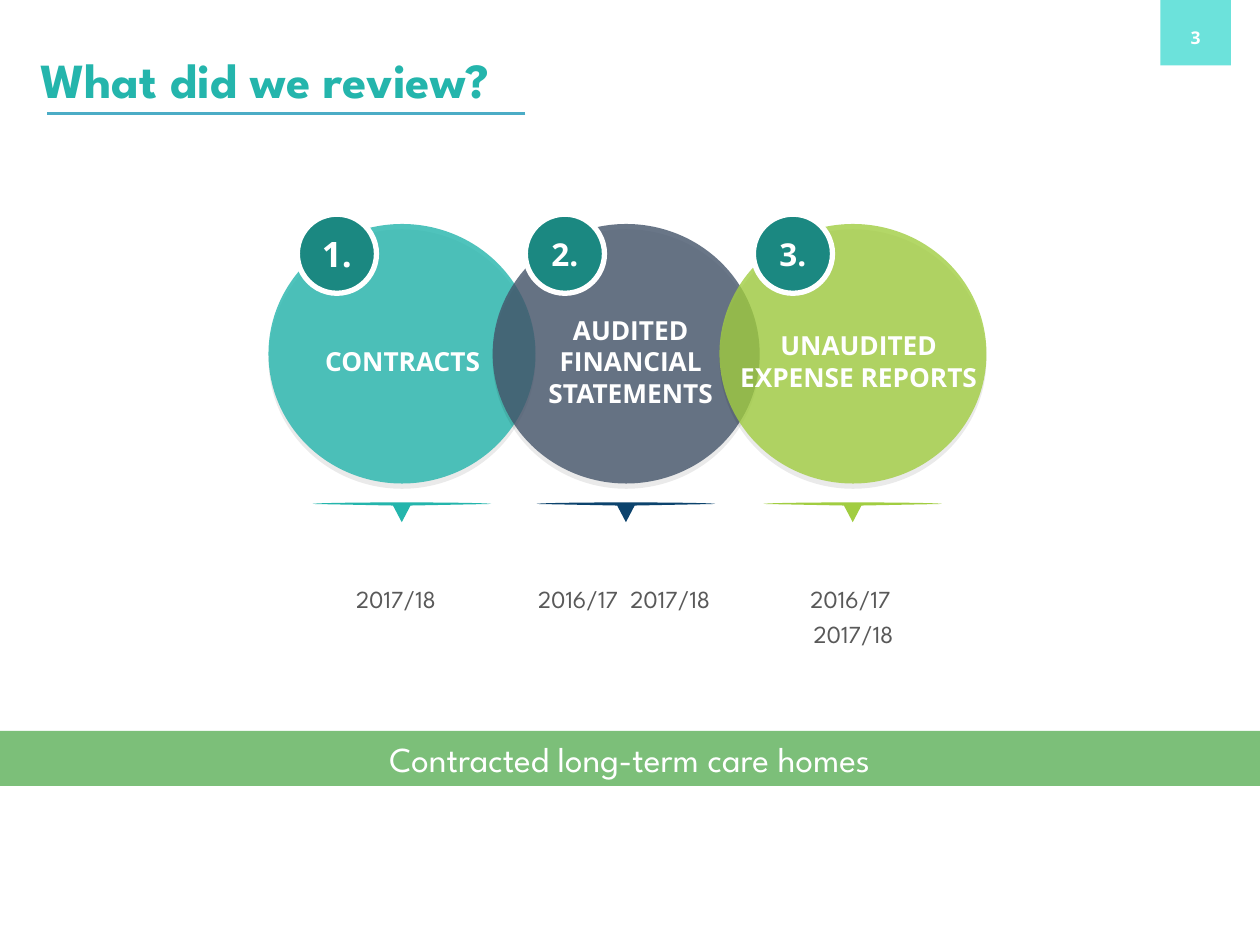
"""Build the slide that lists the three kinds of documents reviewed."""
from dataclasses import dataclass
from math import cos, pi, sin

from lxml import etree
from pptx import Presentation
from pptx.dml.color import RGBColor
from pptx.enum import shapes, text
from pptx.oxml import ns
from pptx.util import Pt

HEAD = "League Spartan"
BODY = "Open Sans"
WHITE = "FFFFFF"
TEAL = "24B5AC"
BADGE_STEP = 130.3


@dataclass
class Box:
    x: float
    y: float
    w: float
    h: float

    def emu(self) -> list:
        return [Pt(v) for v in (self.x, self.y, self.w, self.h)]


@dataclass
class Style:
    font: str
    size: float
    color: str
    bold: bool = False
    align: text.PP_ALIGN = text.PP_ALIGN.CENTER


@dataclass
class Source:
    label: str
    years: list
    circle_x: float
    caption: Box
    color: str
    pointer: str
    number_size: float


SOURCES = [
    Source("CONTRACTS", ["2017/18"], 153.4,
           Box(158.4, 326.9, 136, 26), TEAL, TEAL, 20),
    Source("AUDITED FINANCIAL STATEMENTS", ["2016/17  2017/18"], 281.5,
           Box(294.5, 326.9, 124.6, 46), "44546A", "0C436D", 18),
    Source("UNAUDITED EXPENSE REPORTS", ["2016/17 ", "2017/18"], 411.1,
           Box(425.5, 326.9, 124.6, 46), "A1CD41", "A1CD41", 18),
]


def rgb(color: str) -> RGBColor:
    return RGBColor.from_string(color)


def write(sp, lines: list, style: Style, anchor=text.MSO_ANCHOR.MIDDLE):
    tf = sp.text_frame
    tf.word_wrap = True
    tf.auto_size = text.MSO_AUTO_SIZE.NONE
    tf.vertical_anchor = anchor
    tf.text = "\n".join(lines)
    for p in tf.paragraphs:
        p.alignment = style.align
        p.font.name = style.font
        p.font.size = Pt(style.size)
        p.font.bold = style.bold
        p.font.color.rgb = rgb(style.color)
    return tf


def paint(sp, color: str):
    sp.shadow.inherit = False
    sp.fill.solid()
    sp.fill.fore_color.rgb = rgb(color)
    sp.line.fill.background()
    return sp


def add_shape(s, kind, box: Box, color: str):
    return paint(s.shapes.add_shape(kind, *box.emu()), color)


def add_text(s, box: Box, lines: list, style: Style,
             anchor=text.MSO_ANCHOR.MIDDLE):
    return write(s.shapes.add_textbox(*box.emu()), lines, style, anchor)


def add_alpha(color_el, percent: int):
    etree.SubElement(color_el, ns.qn("a:alpha"), val=str(percent * 1000))


def add_circle(s, src: Source):
    sp = add_shape(s, shapes.MSO_SHAPE.OVAL,
                   Box(src.circle_x, 128, 152.6, 148.3), src.color)
    pr = sp.element.spPr
    add_alpha(pr.find(ns.qn("a:solidFill"))[0], 80)
    shadow = etree.SubElement(
        pr.find(ns.qn("a:effectLst")), ns.qn("a:outerShdw"), blurRad="0",
        dist=str(Pt(3)), dir="5400000", algn="t", rotWithShape="0")
    add_alpha(etree.SubElement(shadow, ns.qn("a:srgbClr"), val="000000"), 10)


def add_label(s, index: int, src: Source):
    box = Box(153.4 + index * BADGE_STEP, 182.2, 153.4, 48.2)
    add_text(s, box, [src.label], Style(BODY, 15, WHITE, True))


def add_caption(s, src: Source):
    tf = add_text(s, src.caption, src.years, Style(HEAD, 14, "595959"),
                  text.MSO_ANCHOR.TOP)
    for p in tf.paragraphs:
        p.line_spacing = 1.2


def add_pointer(s, src: Source):
    cx, cy, rx, ry = src.circle_x + 76.2, 288, 51, 0.9
    arc = [(cx - rx * cos(pi * i / 24), cy - ry * sin(pi * i / 24))
           for i in range(25)]
    points = arc + [(cx + 5, cy + ry), (cx, cy + 10.4), (cx - 5, cy + ry)]
    fb = s.shapes.build_freeform(*points[0], scale=Pt(1))
    fb = s.shapes.build_freeform(*[round(v * 100) for v in points[0]],
                                 scale=Pt(1) / 100)
    fb.add_line_segments([(round(x * 100), round(y * 100))
                          for x, y in points[1:]])
    paint(fb.convert_to_shape(), src.pointer)


def add_badge(s, index: int, src: Source):
    box = Box(169.9 + index * BADGE_STEP, 122.4, 45.2, 45.2)
    sp = add_shape(s, shapes.MSO_SHAPE.OVAL, box, "1B8881")
    sp.line.color.rgb = rgb(WHITE)
    sp.line.width = Pt(3)
    write(sp, [f"{index + 1}."], Style(BODY, src.number_size, WHITE, True))


def add_rule(s, x1: float, x2: float, y: float):
    line = s.shapes.add_connector(shapes.MSO_CONNECTOR.STRAIGHT,
                                  Pt(x1), Pt(y), Pt(x2), Pt(y))
    line.line.color.rgb = rgb("4BACC6")
    line.line.width = Pt(2)
    etree.SubElement(line.element.spPr, ns.qn("a:effectLst"))


def main():
    prs = Presentation()
    prs.slide_width, prs.slide_height = Pt(720), Pt(540)
    s = prs.slides.add_slide(prs.slide_layouts[5])

    tab = add_shape(s, shapes.MSO_SHAPE.RECTANGLE,
                    Box(663.1, -13.7, 40.3, 51.1), "6CE2DB")
    tf = write(tab, ["3"], Style(BODY, 10, WHITE, True),
               text.MSO_ANCHOR.BOTTOM)
    tf.margin_bottom = Pt(10)

    title = s.shapes.title
    title.left, title.top, title.width, title.height = Box(
        15.8, 25.2, 581, 40.3).emu()
    write(title, ["What did we review?"],
          Style(HEAD, 28, TEAL, True, text.PP_ALIGN.LEFT))
    add_rule(s, 300.2, 26.6, 64.8)

    for src in SOURCES:
        add_circle(s, src)
    for index, src in enumerate(SOURCES):
        add_label(s, index, src)
        add_caption(s, src)
        add_pointer(s, src)
        add_badge(s, index, src)

    band = add_shape(s, shapes.MSO_SHAPE.RECTANGLE,
                     Box(0, 417.6, 720, 31.5), "7CBF79")
    write(band, ["Contracted long-term care homes"], Style(HEAD, 20, WHITE))
    prs.save("out.pptx")


if __name__ == "__main__":
    main()
